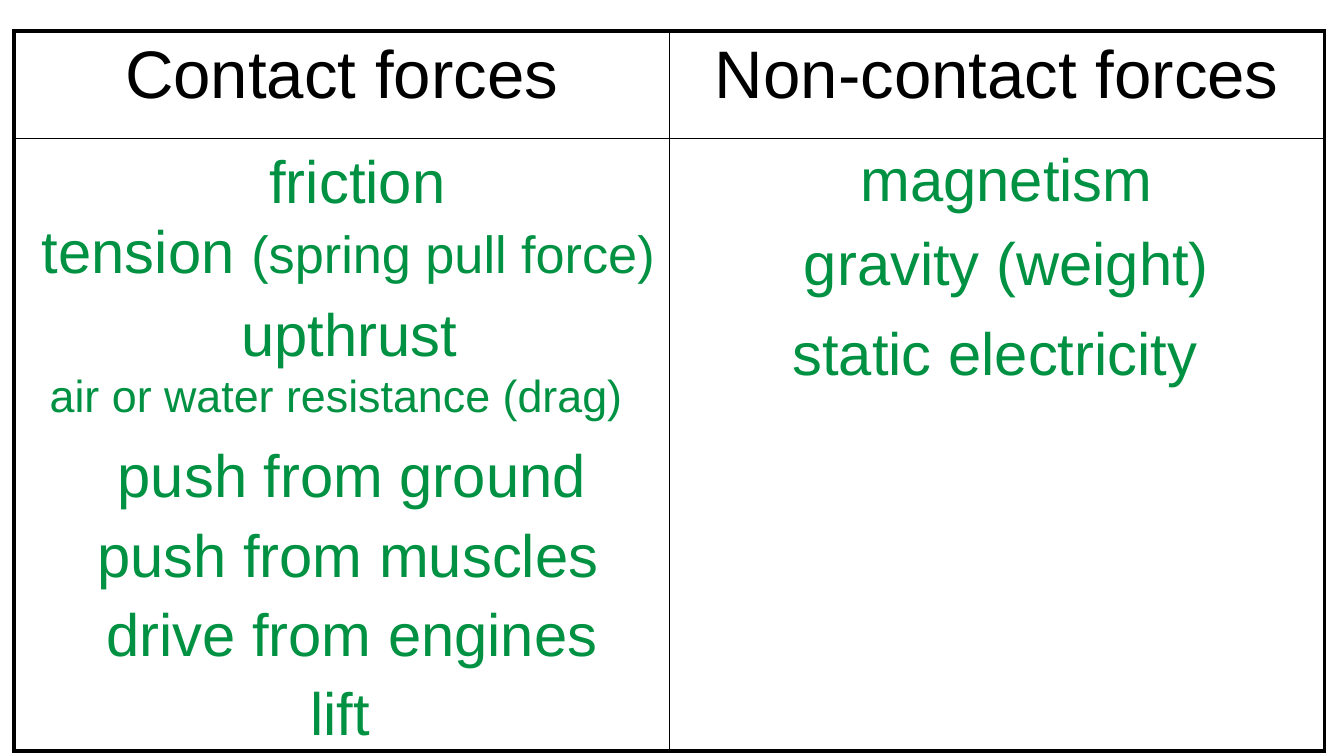
from lxml.etree import SubElement as Sub
from pptx import Presentation
from pptx.dml.color import RGBColor as RGB
from pptx.enum.text import MSO_AUTO_SIZE as Fit, PP_ALIGN as Align
from pptx.oxml.ns import qn
from pptx.util import Pt

PX = 4572  # 200 px to the inch
HUES = {"ink": "000000", "green": "009242"}
THICK, THIN = 2.25, 1


class Sheet:
    def __init__(self, deck):
        self.face = "Arial"
        self.slide = deck.slides.add_slide(deck.slide_layouts[6])

    def style(self, para, size, hue):
        para.alignment = Align.CENTER
        font = para.font
        font.name, font.size, font.bold = self.face, Pt(size), False
        font.color.rgb = RGB.from_string(HUES[hue])

    def label(self, text, x, y, wide, high=128, size=32, note=None):
        """Add one centred green line; note is a smaller (text, size) tail."""
        box = self.slide.shapes.add_textbox(x * PX, y * PX, wide * PX, high * PX)
        frame = box.text_frame
        frame.word_wrap = True
        frame.auto_size = Fit.SHAPE_TO_FIT_TEXT
        para = frame.paragraphs[0]
        self.style(para, size, "green")
        para.add_run().text = text
        if note:
            run = para.add_run()
            run.text = note[0]
            run.font.size = Pt(note[1])

    def edge(self, cell, side, width):
        line = Sub(cell._tc.get_or_add_tcPr(), qn(f"a:ln{side}"), w=str(Pt(width)))
        fill = Sub(line, qn("a:solidFill"))
        Sub(fill, qn("a:srgbClr"), val=HUES["ink"])

    def table(self, heads, x, y, cols, rows):
        """Add a table with a thick frame, thin inner rules and a head row."""
        grid = self.slide.shapes.add_table(
            len(rows), len(cols), x * PX, y * PX, sum(cols) * PX, sum(rows) * PX
        ).table
        grid.first_row = grid.horz_banding = False
        for col, wide in zip(grid.columns, cols):
            col.width = wide * PX
        for row, high in zip(grid.rows, rows):
            row.height = high * PX
        for r in range(len(rows)):
            for c in range(len(cols)):
                cell = grid.cell(r, c)
                outer = {"L": c == 0, "R": c == len(cols) - 1,
                         "T": r == 0, "B": r == len(rows) - 1}
                for side, thick in outer.items():
                    self.edge(cell, side, THICK if thick else THIN)
                cell.fill.background()
        for c, head in enumerate(heads):
            para = grid.cell(0, c).text_frame.paragraphs[0]
            para.text = head
            self.style(para, 36, "ink")


def main():
    deck = Presentation()
    deck.slide_width, deck.slide_height = 2000 * PX, 1125 * PX
    sheet = Sheet(deck)
    sheet.table(["Contact forces", "Non-contact forces"],
                21, 46, [975, 975], [160, 912])

    sheet.label("magnetism", 1260, 201, 476)
    sheet.label("gravity (weight)", 1123, 326, 750)
    sheet.label("static electricity", 1151, 460, 660)

    sheet.label("friction", 294, 204, 476)
    sheet.label("tension ", 0, 308, 1058, note=("(spring pull force) ", 28))
    sheet.label("upthrust", 282, 432, 476)
    sheet.label("air or water resistance (drag)", 0, 538, 1000, 100, 24)
    lower = [("push from ground", 74), ("push from muscles", 68),
             ("drive from engines", 74), ("lift", 56)]
    for i, (text, x) in enumerate(lower):
        sheet.label(text, x, 642 + 118 * i, 900)

    deck.save("out.pptx")


if __name__ == "__main__":
    main()
